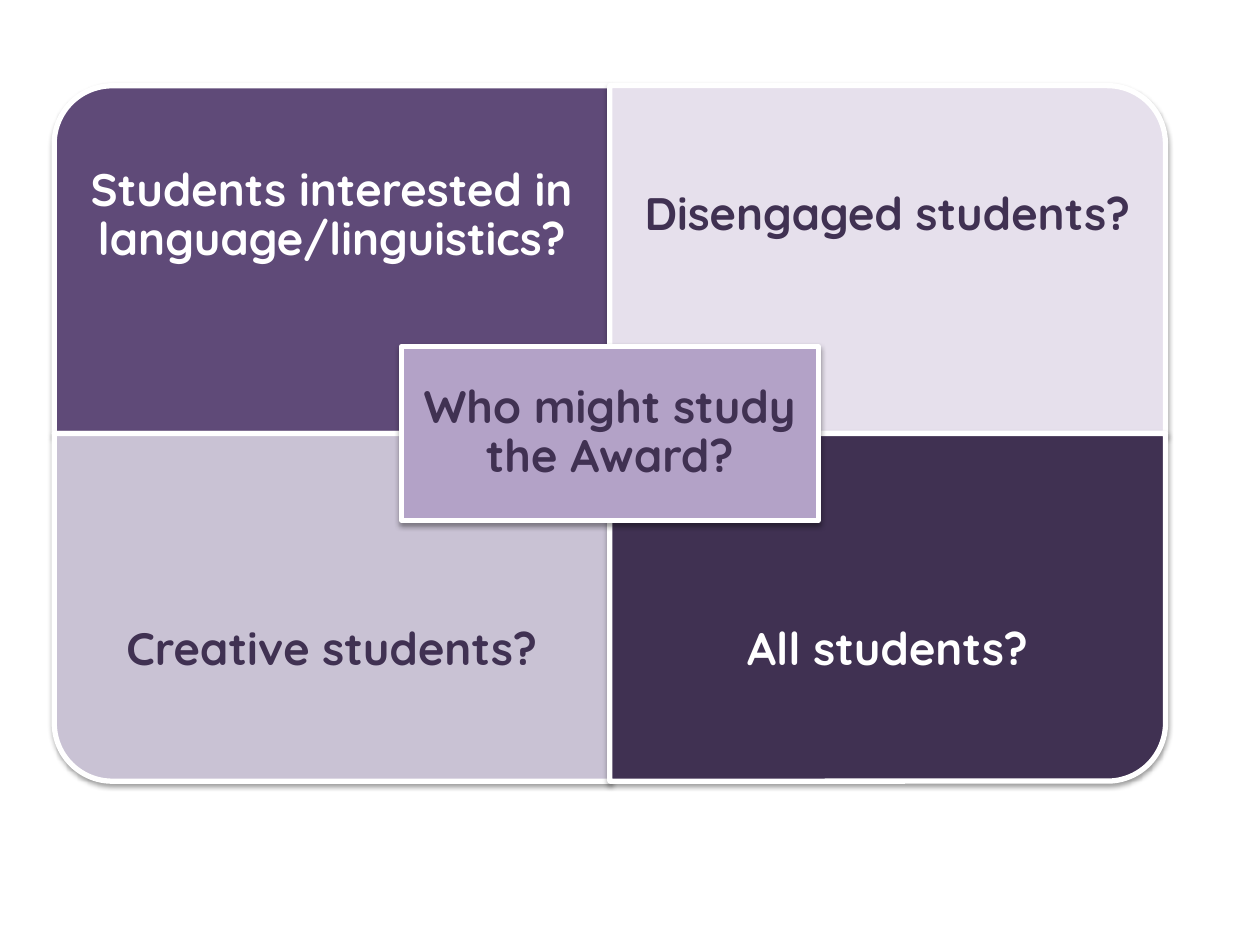
from dataclasses import dataclass

from lxml.etree import SubElement
from pptx import Presentation
from pptx.dml.color import RGBColor
from pptx.enum.shapes import MSO_SHAPE as Shape
from pptx.enum.text import MSO_ANCHOR as Anchor, PP_ALIGN as Align
from pptx.oxml.ns import qn
from pptx.util import Inches, Pt


@dataclass(frozen=True)
class Theme:
    """Colours, type and line sizes of the slide."""
    white: str = "FFFFFF"
    ink: str = "403152"
    purple: str = "5F4A78"
    mist: str = "E6E0EC"
    lilac: str = "C9C2D4"
    lavender: str = "B3A2C7"
    font: str = "Quicksand"
    size: float = 26
    border: float = 3


THEME = Theme()

QUADRANTS = [
    ("Students interested in language/linguistics?", THEME.purple, THEME.white, 0, 0, 270),
    ("Disengaged students?", THEME.mist, THEME.ink, 1, 0, 0),
    ("Creative students?", THEME.lilac, THEME.ink, 0, 1, 180),
    ("All students?", THEME.ink, THEME.white, 1, 1, 90),
]


def add_shadow(panel):
    """Give a panel a soft shadow that falls straight down."""
    panel.shadow.inherit = False
    effects = panel._element.spPr.find(qn("a:effectLst"))
    shadow = SubElement(effects, qn("a:outerShdw"), blurRad=str(Pt(3.1)),
                        dist=str(Pt(1.6)), dir="5400000", rotWithShape="0")
    black = SubElement(shadow, qn("a:srgbClr"), val="000000")
    SubElement(black, qn("a:alpha"), val="38000")


def add_panel(group, kind, left, top, width, height, fill, turn=0):
    """Draw a white-edged panel that covers the box after its turn."""
    wide, high = (height, width) if turn % 180 else (width, height)
    panel = group.shapes.add_shape(
        kind, Inches(left + (width - wide) / 2), Inches(top + (height - high) / 2),
        Inches(wide), Inches(high))
    panel.rotation = turn
    panel.fill.solid()
    panel.fill.fore_color.rgb = RGBColor.from_string(fill)
    panel.line.color.rgb = RGBColor.from_string(THEME.white)
    panel.line.width = Pt(THEME.border)
    add_shadow(panel)


def add_label(group, left, top, width, height, text, colour, inset):
    """Write a bold centred label in the middle of the box."""
    label = group.shapes.add_textbox(
        Inches(left), Inches(top), Inches(width), Inches(height))
    frame = label.text_frame
    frame.word_wrap = True
    frame.vertical_anchor = Anchor.MIDDLE
    frame.margin_left = frame.margin_right = Inches(inset)
    frame.margin_top = frame.margin_bottom = Inches(inset)
    paragraph = frame.paragraphs[0]
    paragraph.alignment = Align.CENTER
    paragraph.line_spacing = 0.9
    run = paragraph.add_run()
    run.text = text
    run.font.name = THEME.font
    run.font.size = Pt(THEME.size)
    run.font.bold = True
    run.font.color.rgb = RGBColor.from_string(colour)


def add_matrix(slide, left, top, width, height):
    """Fill the box with four quadrants around a central question."""
    group = slide.shapes.add_group_shape()
    cell_width, cell_height = width / 2, height / 2
    label_height = cell_height * 0.75
    for text, fill, colour, column, row, turn in QUADRANTS:
        x, y = left + column * cell_width, top + row * cell_height
        add_panel(group, Shape.ROUND_1_RECTANGLE, x, y, cell_width, cell_height, fill, turn)
        label_top = y + row * (cell_height - label_height)
        add_label(group, x, label_top, cell_width, label_height, text, colour, 0.2)

    centre_width, centre_height = cell_width * 0.75, cell_height / 2
    centre = (left + (width - centre_width) / 2, top + (height - centre_height) / 2,
              centre_width, centre_height)
    add_panel(group, Shape.RECTANGLE, *centre, THEME.lavender)
    add_label(group, *centre, "Who might study the Award?", THEME.ink, 0.11)


def main():
    """Build the slide and save it."""
    deck = Presentation()
    deck.slide_width, deck.slide_height = Inches(10), Inches(7.5)
    slide = deck.slides.add_slide(deck.slide_layouts[6])
    add_matrix(slide, 0.43, 0.68, 8.82, 5.52)
    deck.save("out.pptx")


if __name__ == "__main__":
    main()
